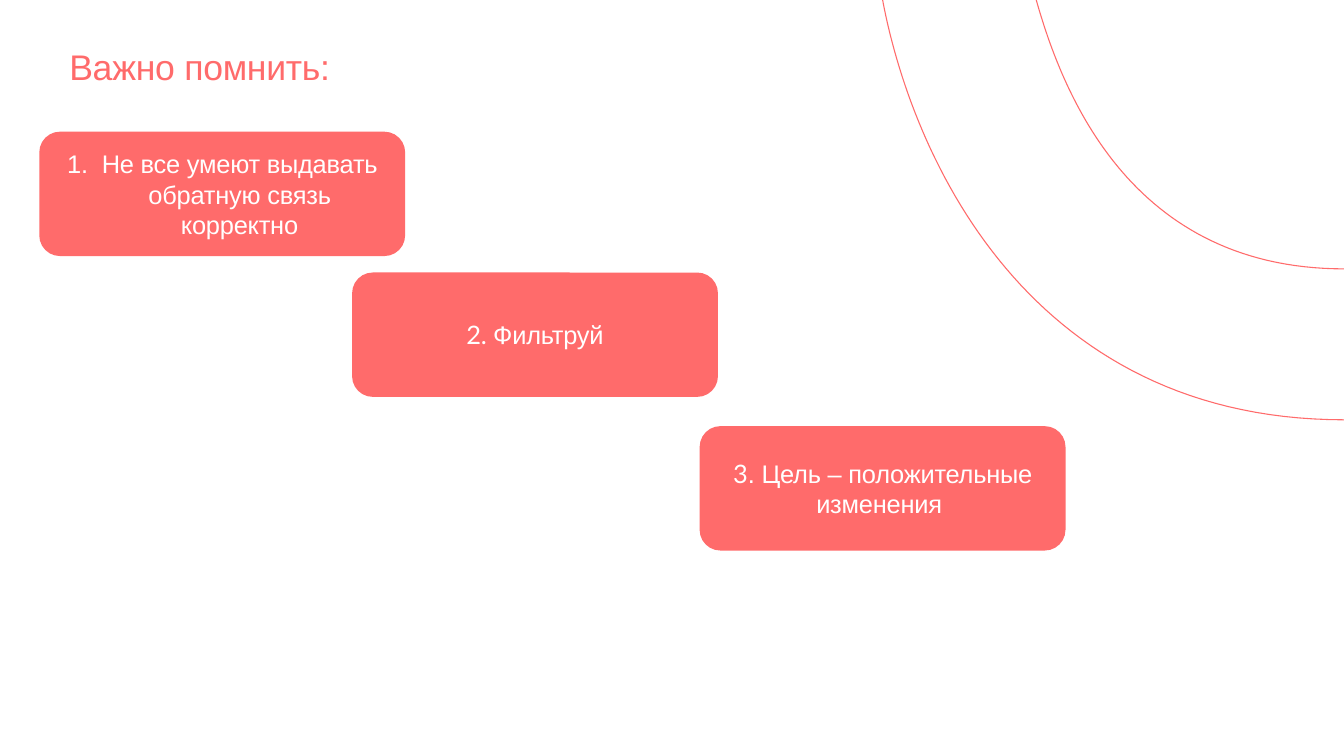
from dataclasses import dataclass

from lxml import etree
from pptx import Presentation
from pptx.dml.color import RGBColor
from pptx.enum.shapes import MSO_SHAPE
from pptx.enum.text import MSO_ANCHOR, PP_ALIGN
from pptx.oxml.ns import qn
from pptx.util import Inches, Pt

ROUNDED = MSO_SHAPE.ROUNDED_RECTANGLE
MIDDLE = MSO_ANCHOR.MIDDLE
CENTER = PP_ALIGN.CENTER


@dataclass(frozen=True)
class Theme:
    coral: RGBColor = RGBColor(0xFF, 0x6B, 0x6B)
    white: RGBColor = RGBColor(0xFF, 0xFF, 0xFF)
    title_size: int = 28
    body_size: int = 20
    line_width: float = 0.85
    font: str = "Arial"
    number_font: str = "Lato"


THEME = Theme()
SLIDE_WIDTH = 1058 / 72
SLIDE_HEIGHT = SLIDE_WIDTH * 9 / 16
CURVE_STEPS = 60
CARD_SIZE = (4, 1.36)
ARCS = [
    [(11.33, 0), (11.64, 1.1), (12.41, 2.94), (14.7, 2.94)],
    [(9.65, 0), (9.97, 1.7), (11.24, 4.59), (14.7, 4.59)],
]
CARDS = [
    (0.43, 1.44, [("Не все умеют выдавать обратную связь корректно", THEME.font)], True),
    (3.85, 2.98, [("2. ", THEME.number_font), ("Фильтруй", THEME.font)], False),
    (7.65, 4.66, [("3", THEME.number_font),
                  (". Цель – положительные изменения ", THEME.font)], False),
]


def bezier(controls):
    points = []
    for step in range(CURVE_STEPS + 1):
        t = step / CURVE_STEPS
        weights = ((1 - t) ** 3, 3 * t * (1 - t) ** 2, 3 * t * t * (1 - t), t ** 3)
        points.append(tuple(Inches(sum(w * c[axis] for w, c in zip(weights, controls)))
                            for axis in (0, 1)))
    return points


def add_arcs(s):
    first, second = (bezier(arc) for arc in ARCS)
    builder = s.shapes.build_freeform(*first[0])
    builder.add_line_segments(first[1:], close=False)
    builder.move_to(*second[0])
    builder.add_line_segments(second[1:], close=False)
    sp = builder.convert_to_shape()
    sp.shadow.inherit = False
    sp.fill.background()
    sp.line.color.rgb = THEME.coral
    sp.line.width = Pt(THEME.line_width)


def add_run(p, text, font, size, color):
    r = p.add_run()
    r.text = text
    r.font.name = font
    r.font.size = Pt(size)
    r.font.color.rgb = color
    r.font._element.set("spc", "-20")


def number_paragraph(p):
    pPr = p._p.get_or_add_pPr()
    pPr.set("marL", str(Inches(0.38)))
    pPr.set("indent", str(-Inches(0.38)))
    etree.SubElement(pPr, qn("a:buFont"), typeface=THEME.font)
    etree.SubElement(pPr, qn("a:buAutoNum"), type="arabicPeriod")


def add_title(s, text):
    sp = s.shapes.add_textbox(Inches(0.66), Inches(0.44), Inches(12.16), Inches(1.21))
    tf = sp.text_frame
    tf.word_wrap = True
    add_run(tf.paragraphs[0], text, THEME.font, THEME.title_size, THEME.coral)


def add_card(s, left, top, runs, numbered):
    width, height = CARD_SIZE
    sp = s.shapes.add_shape(ROUNDED, Inches(left), Inches(top), Inches(width), Inches(height))
    sp.shadow.inherit = False
    sp.fill.solid()
    sp.fill.fore_color.rgb = THEME.coral
    sp.line.fill.background()
    tf = sp.text_frame
    tf.word_wrap = True
    tf.vertical_anchor = MIDDLE
    p = tf.paragraphs[0]
    p.alignment = CENTER
    if numbered:
        number_paragraph(p)
    for text, font in runs:
        add_run(p, text, font, THEME.body_size, THEME.white)


def main():
    prs = Presentation()
    prs.slide_width = Inches(SLIDE_WIDTH)
    prs.slide_height = Inches(SLIDE_HEIGHT)
    s = prs.slides.add_slide(prs.slide_layouts[6])
    add_arcs(s)
    add_title(s, "Важно помнить:")
    for card in CARDS:
        add_card(s, *card)
    prs.save("out.pptx")


if __name__ == "__main__":
    main()
